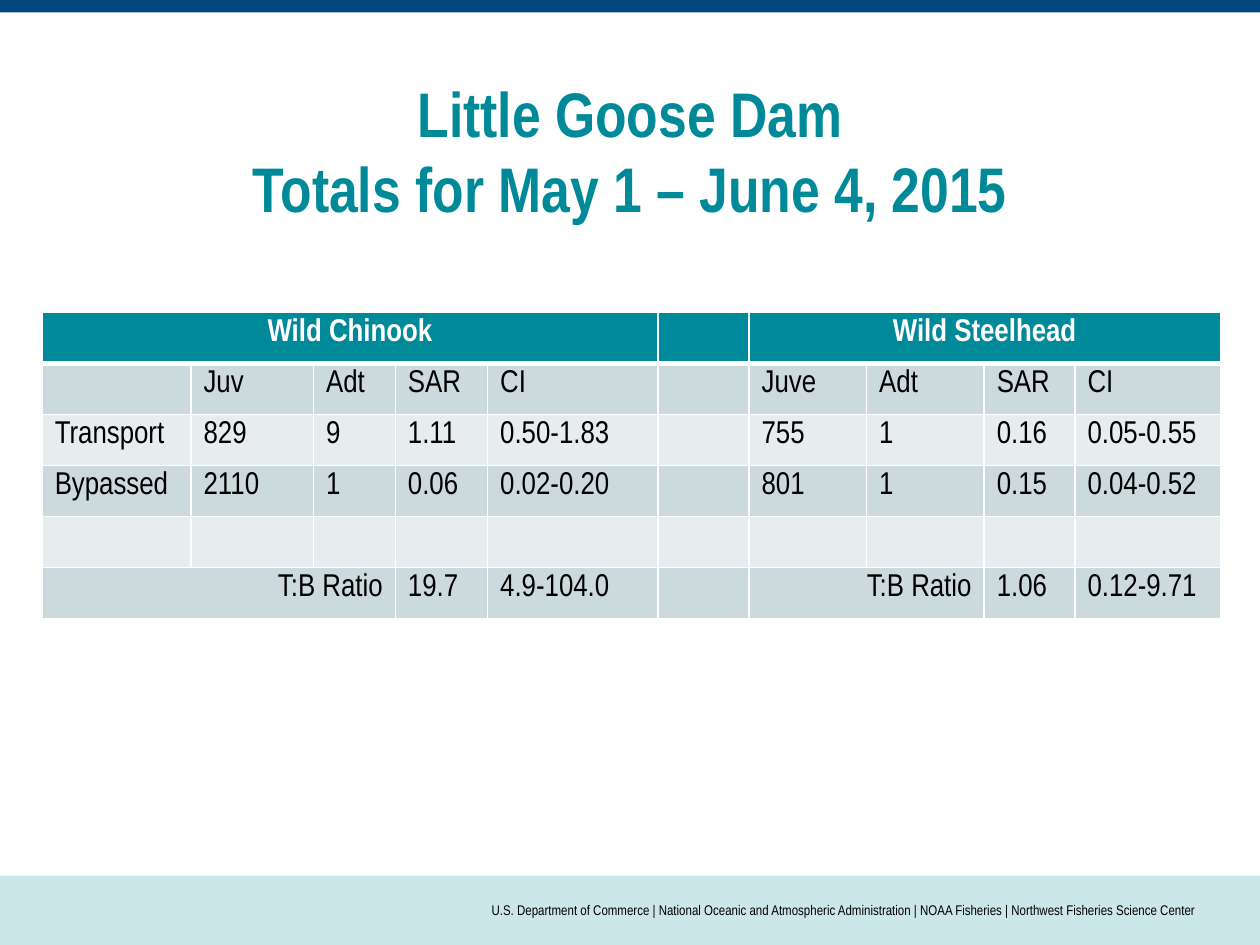
from dataclasses import dataclass

from lxml.etree import SubElement
from pptx import Presentation
from pptx.dml.color import RGBColor
from pptx.enum.shapes import MSO_SHAPE
from pptx.enum.text import MSO_ANCHOR, PP_ALIGN
from pptx.oxml.ns import qn
from pptx.util import Cm, Pt


@dataclass(frozen=True)
class Theme:
    font: str = "Arial Narrow"
    teal: str = "008998"
    navy: str = "00467F"
    pale_teal: str = "CCE7EA"
    band_dark: str = "CCDADD"
    band_light: str = "E7EDEF"
    ink: str = "000000"
    white: str = "FFFFFF"
    title_size: int = 36
    table_size: int = 18
    footer_size: int = 8
    rule: int = 1
    header_rule: int = 3


THEME = Theme()

SLIDE_WIDTH, SLIDE_HEIGHT = 25.4, 19.05
TOP_BAND = (0, 0, SLIDE_WIDTH, 0.25)
TITLE_BOX = (1.27, 1.27, 22.86, 3.5)
TABLE_BOX = (0.85, 6.3, 23.75, 6.17)
FOOTER_BOX = (0, 17.65, SLIDE_WIDTH, 1.4)

COLUMN_WIDTHS = (3, 2.47, 1.65, 1.86, 3.43, 1.84, 2.37, 2.37, 1.83, 2.93)
TOTALS = (
    ("Wild Chinook", "", "", "", "", "", "Wild Steelhead", "", "", ""),
    ("", "Juv", "Adt", "SAR", "CI", "", "Juve", "Adt", "SAR", "CI"),
    ("Transport", "829", "9", "1.11", "0.50-1.83", "", "755", "1", "0.16", "0.05-0.55"),
    ("Bypassed", "2110", "1", "0.06", "0.02-0.20", "", "801", "1", "0.15", "0.04-0.52"),
    ("",) * 10,
    ("T:B Ratio", "", "", "19.7", "4.9-104.0", "", "T:B Ratio", "", "1.06", "0.12-9.71"),
)
# (row, first column, last column) -> alignment of the merged cell
MERGES = {
    (0, 0, 4): PP_ALIGN.CENTER,
    (0, 6, 9): PP_ALIGN.CENTER,
    (5, 0, 2): PP_ALIGN.RIGHT,
    (5, 6, 7): PP_ALIGN.RIGHT,
}
AGENCIES = (
    "U.S. Department of Commerce",
    "National Oceanic and Atmospheric Administration",
    "NOAA Fisheries",
    "Northwest Fisheries Science Center",
)


def style_text(frame, size, color, bold=False, align=PP_ALIGN.LEFT):
    for paragraph in frame.paragraphs:
        paragraph.alignment = align
        for run in paragraph.runs:
            run.font.name = THEME.font
            run.font.size = Pt(size)
            run.font.bold = bold
            run.font.color.rgb = RGBColor.from_string(color)


def add_band(slide, box, color):
    band = slide.shapes.add_shape(MSO_SHAPE.RECTANGLE, *map(Cm, box))
    band.shadow.inherit = False
    band.fill.solid()
    band.fill.fore_color.rgb = RGBColor.from_string(color)
    band.line.fill.background()


def add_footer(slide, box):
    add_band(slide, box, THEME.pale_teal)
    left, top, width, height = box
    credits = slide.shapes.add_textbox(
        Cm(left + 6.35), Cm(top), Cm(width - 7.62), Cm(height))
    frame = credits.text_frame
    frame.word_wrap = True
    frame.vertical_anchor = MSO_ANCHOR.MIDDLE
    frame.margin_left = frame.margin_right = 0
    frame.text = " | ".join(AGENCIES)
    style_text(frame, THEME.footer_size, THEME.ink, align=PP_ALIGN.RIGHT)


def place_title(slide, box, text):
    title = slide.shapes.title
    title.left, title.top, title.width, title.height = map(Cm, box)
    frame = title.text_frame
    frame.vertical_anchor = MSO_ANCHOR.MIDDLE
    frame.text = text
    style_text(frame, THEME.title_size, THEME.teal, True, PP_ALIGN.CENTER)


def set_borders(cell, widths):
    """Draw white cell borders; call before the fill, which must follow them."""
    properties = cell._tc.get_or_add_tcPr()
    for side, width in widths.items():
        line = SubElement(properties, qn(f"a:ln{side}"), w=str(Pt(width)))
        fill = SubElement(line, qn("a:solidFill"))
        SubElement(fill, qn("a:srgbClr"), val=THEME.white)


def add_totals_table(slide, box):
    table = slide.shapes.add_table(
        len(TOTALS), len(COLUMN_WIDTHS), *map(Cm, box)).table
    for column, width in zip(table.columns, COLUMN_WIDTHS):
        column.width = Cm(width)
    for r, labels in enumerate(TOTALS):
        is_header = r == 0
        band = THEME.band_dark if r % 2 else THEME.band_light
        widths = dict.fromkeys("LRTB", THEME.rule)
        if is_header:
            widths["B"] = THEME.header_rule
        elif r == 1:
            widths["T"] = THEME.header_rule
        for c, label in enumerate(labels):
            cell = table.cell(r, c)
            set_borders(cell, widths)
            cell.fill.solid()
            cell.fill.fore_color.rgb = RGBColor.from_string(
                THEME.teal if is_header else band)
            cell.text_frame.text = label
            style_text(cell.text_frame, THEME.table_size,
                       THEME.white if is_header else THEME.ink, is_header)
    for (r, first, last), align in MERGES.items():
        merged = table.cell(r, first)
        merged.merge(table.cell(r, last))
        merged.text_frame.paragraphs[0].alignment = align


def main():
    deck = Presentation()
    deck.slide_width, deck.slide_height = Cm(SLIDE_WIDTH), Cm(SLIDE_HEIGHT)
    slide = deck.slides.add_slide(deck.slide_layouts.get_by_name("Title Only"))
    add_footer(slide, FOOTER_BOX)
    add_band(slide, TOP_BAND, THEME.navy)
    place_title(slide, TITLE_BOX, "Little Goose Dam\vTotals for May 1 – June 4, 2015")
    add_totals_table(slide, TABLE_BOX)
    deck.save("out.pptx")


if __name__ == "__main__":
    main()
